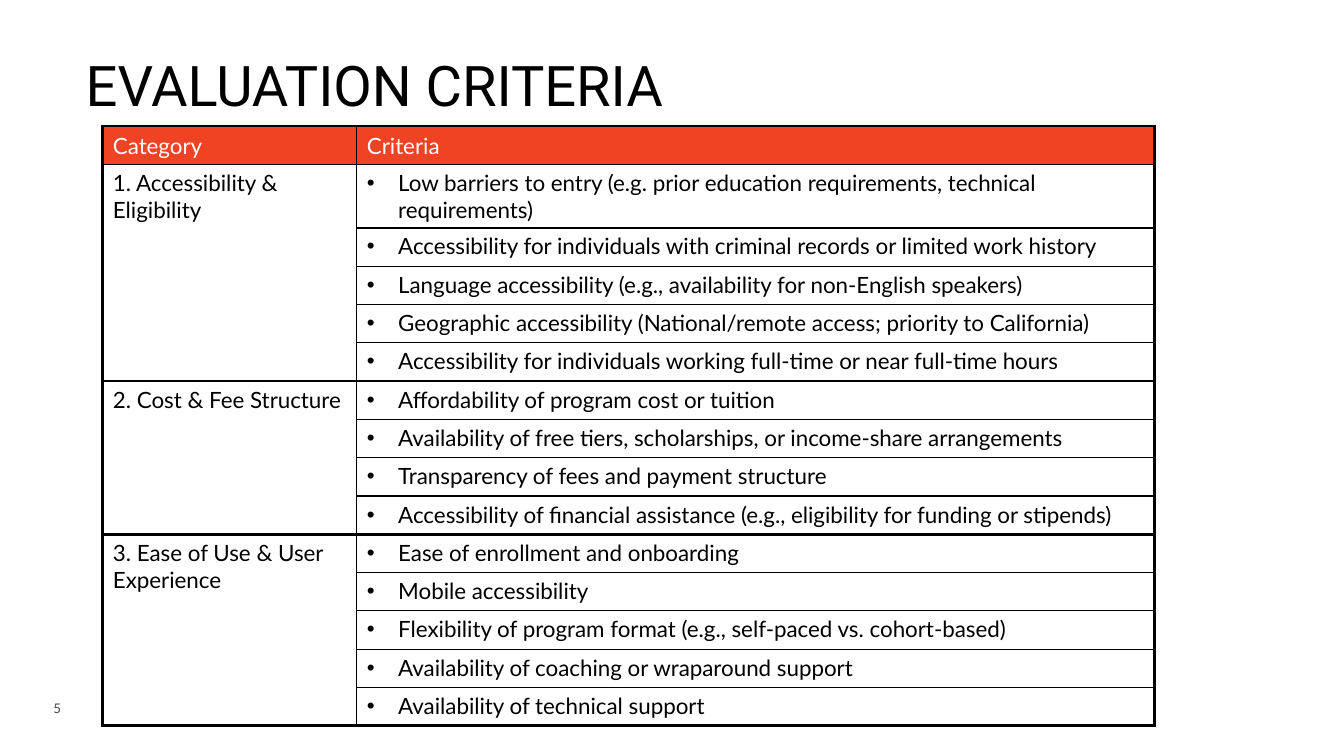
from dataclasses import dataclass

from lxml.etree import SubElement
from pptx import Presentation
from pptx.dml.color import RGBColor
from pptx.enum.text import MSO_ANCHOR, MSO_AUTO_SIZE, PP_ALIGN
from pptx.oxml.ns import qn
from pptx.util import Inches, Pt

BLACK, WHITE, RED, GRAY = "000000", "FFFFFF", "EF4323", "474C55"
THIN, THICK = 1, 2.25


@dataclass(frozen=True)
class Category:
    name: str
    criteria: tuple[str, ...]


CATEGORIES = (
    Category("1. Accessibility & Eligibility", (
        "Low barriers to entry (e.g. prior education requirements, technical requirements)",
        "Accessibility for individuals with criminal records or limited work history",
        "Language accessibility (e.g., availability for non-English speakers)",
        "Geographic accessibility (National/remote access; priority to California)",
        "Accessibility for individuals working full-time or near full-time hours",
    )),
    Category("2. Cost & Fee Structure", (
        "Affordability of program cost or tuition",
        "Availability of free tiers, scholarships, or income-share arrangements",
        "Transparency of fees and payment structure",
        "Accessibility of financial assistance (e.g., eligibility for funding or stipends)",
    )),
    Category("3. Ease of Use & User Experience", (
        "Ease of enrollment and onboarding",
        "Mobile accessibility",
        "Flexibility of program format (e.g., self-paced vs. cohort-based)",
        "Availability of coaching or wraparound support",
        "Availability of technical support",
    )),
)


def color(value: str) -> RGBColor:
    return RGBColor.from_string(value)


def add_span(para, text: str, size: float, ink: str, font: str = "Lato") -> None:
    span = para.add_run()
    span.text = text
    span.font.name = font
    span.font.size = Pt(size)
    span.font.bold = False
    span.font.color.rgb = color(ink)


def set_frame(box, anchor: MSO_ANCHOR):
    frame = box.text_frame
    frame.margin_left = frame.margin_top = frame.margin_right = frame.margin_bottom = 0
    frame.auto_size = MSO_AUTO_SIZE.NONE
    frame.word_wrap = True
    frame.vertical_anchor = anchor
    return frame.paragraphs[0]


def add_bullet(para) -> None:
    properties = para._p.get_or_add_pPr()
    properties.set("marL", str(Inches(0.31)))
    properties.set("indent", str(Inches(-0.31)))
    bullet_color = SubElement(properties, qn("a:buClr"))
    SubElement(bullet_color, qn("a:srgbClr"), val=BLACK)
    SubElement(properties, qn("a:buFont"), typeface="Arial")
    SubElement(properties, qn("a:buChar"), char="•")


def set_borders(cell, **widths: float) -> None:
    properties = cell._tc.get_or_add_tcPr()
    for side in ("L", "R", "T", "B"):
        if side in widths:
            line = SubElement(properties, qn(f"a:ln{side}"), w=str(Pt(widths[side])))
            fill = SubElement(line, qn("a:solidFill"))
            SubElement(fill, qn("a:srgbClr"), val=BLACK)


def add_header(table) -> None:
    sides = ({"L": THICK, "R": THIN}, {"L": THIN, "R": THICK})
    for column, text in enumerate(("Category", "Criteria")):
        cell = table.cell(0, column)
        set_borders(cell, T=THICK, B=THIN, **sides[column])
        cell.fill.solid()
        cell.fill.fore_color.rgb = color(RED)
        cell.vertical_anchor = MSO_ANCHOR.BOTTOM
        add_span(cell.text_frame.paragraphs[0], text, 16, WHITE)


def add_category(table, category: Category, first: int) -> int:
    last = first + len(category.criteria) - 1
    top = THIN if first == 1 else THICK
    name_cell = table.cell(first, 0)
    name_cell.merge(table.cell(last, 0))
    add_span(name_cell.text_frame.paragraphs[0], category.name, 16, BLACK)
    for row, criterion in enumerate(category.criteria, first):
        left, right = table.cell(row, 0), table.cell(row, 1)
        edges = {}
        if row == first:
            edges["T"] = top
        if row in (first, last):
            edges["B"] = THICK
        set_borders(left, L=THICK, R=THIN, **edges)
        set_borders(right, L=THIN, R=THICK, T=top if row == first else THIN,
                    B=THICK if row == last else THIN)
        left.fill.background()
        right.fill.background()
        para = right.text_frame.paragraphs[0]
        add_bullet(para)
        add_span(para, criterion, 16, BLACK)
    return last + 1


def add_criteria_table(page) -> None:
    row_count = 1 + sum(len(category.criteria) for category in CATEGORIES)
    table = page.shapes.add_table(row_count, 2, Inches(1.02), Inches(1.25),
                                  Inches(10.43), Inches(0.38 * row_count)).table
    table.first_row = table.horz_banding = False
    for column, width in zip(table.columns, (2.52, 7.91)):
        column.width = Inches(width)
    for row in table.rows:
        row.height = Inches(0.38)
    add_header(table)
    first = 1
    for category in CATEGORIES:
        first = add_category(table, category, first)


def main() -> None:
    deck = Presentation()
    deck.slide_width, deck.slide_height = Inches(13.33), Inches(7.5)
    page = deck.slides.add_slide(deck.slide_layouts[5])

    number = page.shapes.add_textbox(Inches(0.53), Inches(6.95), Inches(1.14), Inches(0.16))
    add_span(set_frame(number, MSO_ANCHOR.MIDDLE), "5", 9.5, GRAY)

    title = page.shapes.title
    title.left, title.top = Inches(0.85), Inches(0.58)
    title.width, title.height = Inches(11.63), Inches(0.61)
    para = set_frame(title, MSO_ANCHOR.TOP)
    para.alignment = PP_ALIGN.LEFT
    para.line_spacing = 0.9
    add_span(para, "EVALUATION CRITERIA", 40, BLACK, "Roboto")

    add_criteria_table(page)
    deck.save("out.pptx")


if __name__ == "__main__":
    main()
